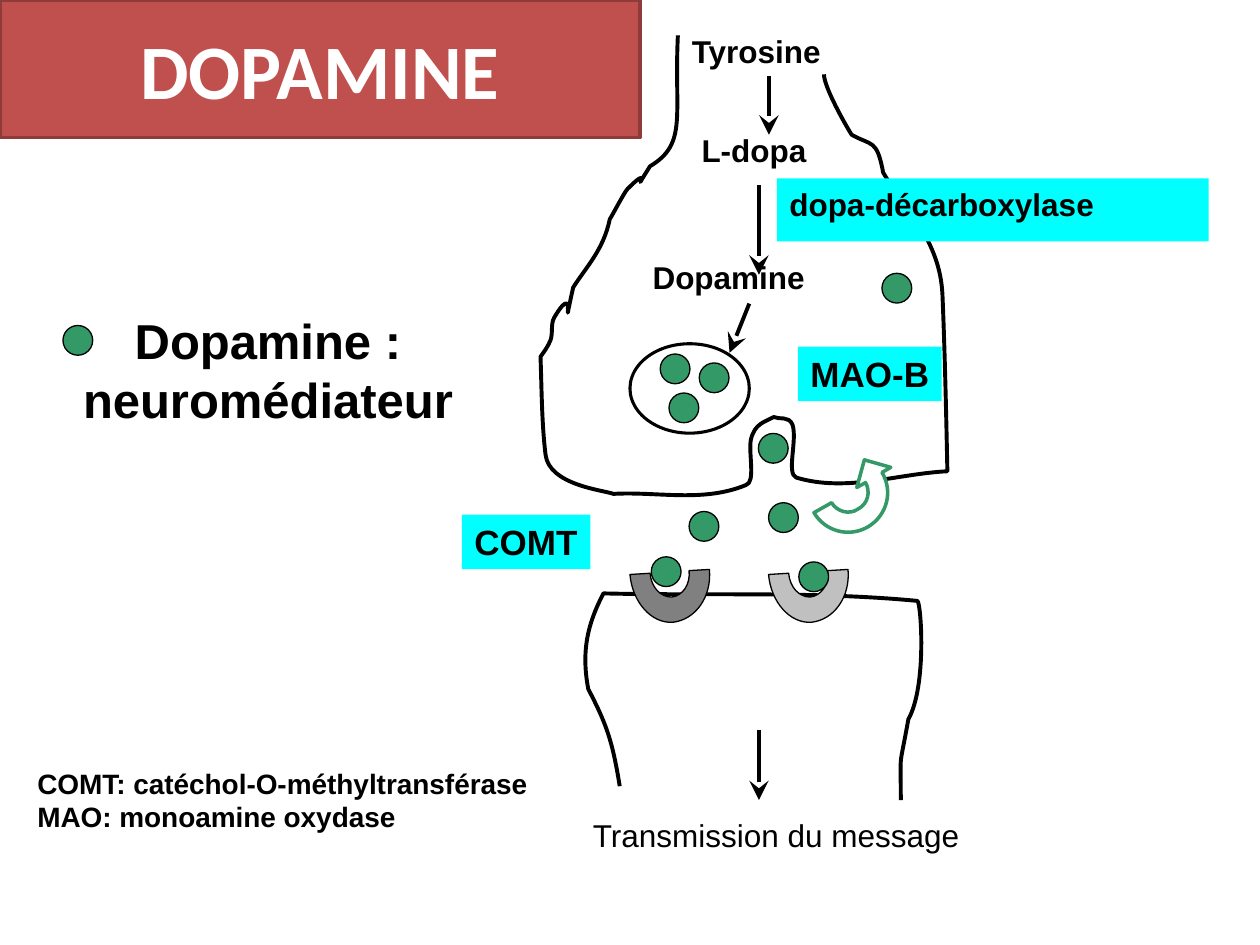
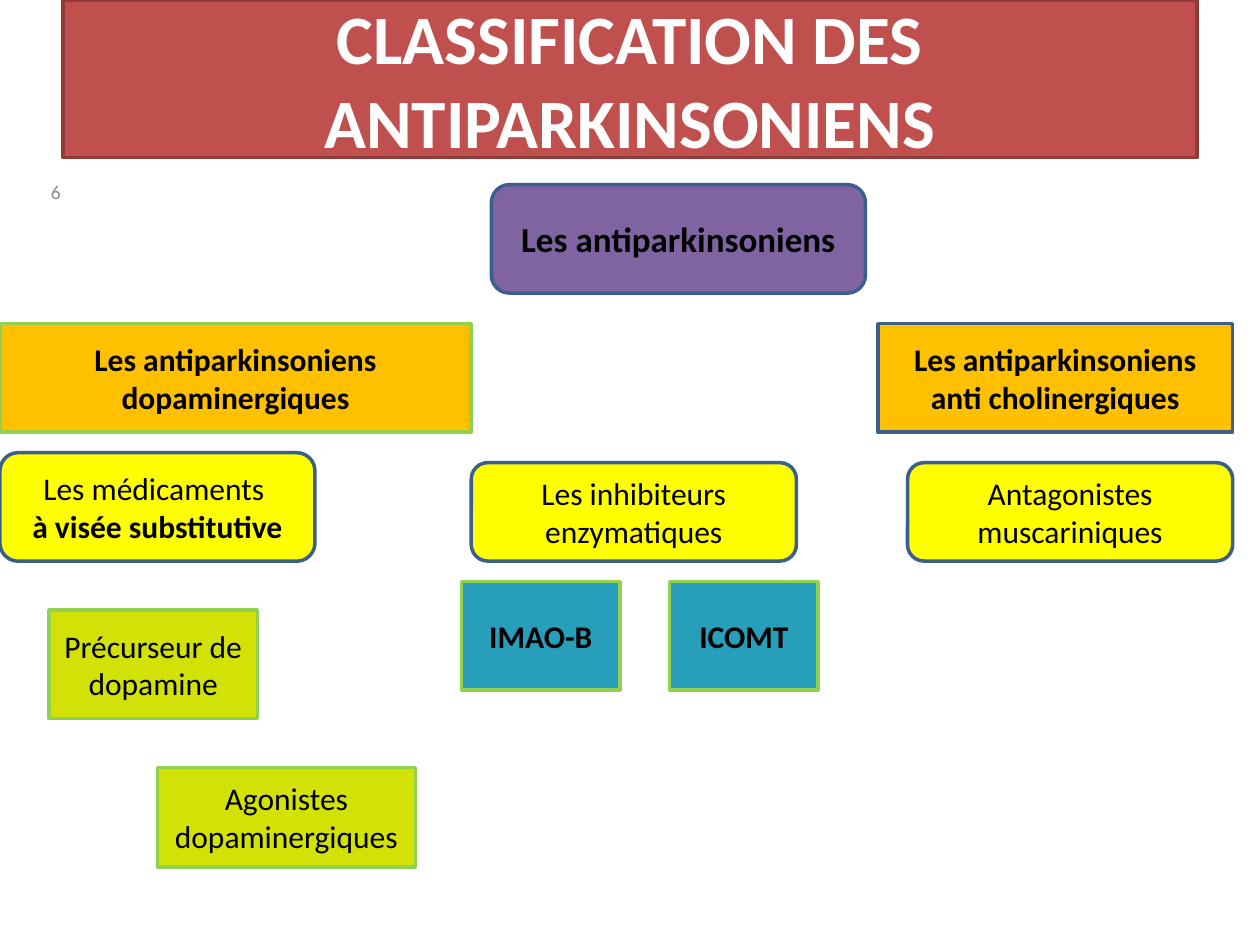
from lxml import etree
from pptx import Presentation
from pptx.dml.color import RGBColor
from pptx.enum import shapes, text
from pptx.oxml import ns
from pptx.util import Pt

BLACK = RGBColor(0x00, 0x00, 0x00)
WHITE = RGBColor(0xFF, 0xFF, 0xFF)
GREY = RGBColor(0x8C, 0x8C, 0x8C)
RED = RGBColor(0xC0, 0x50, 0x4D)
DARK_RED = RGBColor(0x8E, 0x3B, 0x39)
GREEN = RGBColor(0x33, 0x99, 0x66)
CYAN = RGBColor(0x00, 0xFF, 0xFF)
DARK_RECEPTOR = RGBColor(0x80, 0x80, 0x80)
LIGHT_RECEPTOR = RGBColor(0xC0, 0xC0, 0xC0)
PURPLE = RGBColor(0x80, 0x64, 0xA2)
ORANGE = RGBColor(0xFF, 0xC0, 0x00)
YELLOW = RGBColor(0xFF, 0xFF, 0x00)
LIME = RGBColor(0xD2, 0xE2, 0x06)
TEAL = RGBColor(0x27, 0x9F, 0xBB)
BLUE_LINE = RGBColor(0x3A, 0x5F, 0x8C)
GREEN_LINE = RGBColor(0x92, 0xD0, 0x50)

RECT = shapes.MSO_SHAPE.RECTANGLE
ROUNDED = shapes.MSO_SHAPE.ROUNDED_RECTANGLE
OVAL = shapes.MSO_SHAPE.OVAL
LEFT, CENTER, RIGHT = text.PP_ALIGN.LEFT, text.PP_ALIGN.CENTER, text.PP_ALIGN.RIGHT
TOP, MIDDLE = text.MSO_ANCHOR.TOP, text.MSO_ANCHOR.MIDDLE

DOT_SIZE = 17
UNITS_PER_POINT = 100

AXON_TERMINAL = [
    (123.4, 20.2),
    (121.2, 66.2, 129.1, 82.1, 107.5, 95),
    (93.8, 116.6, 111.8, 90.7, 94.6, 108),
    (93.1, 109.4, 85.9, 123.1, 84.5, 125.3),
    (80.9, 142.6, 71.5, 151.9, 63.6, 164.2),
    (55.7, 199.4, 67.2, 157, 52.8, 181.4),
    (50.6, 185, 52.1, 190.8, 50.6, 194.4),
    (49.2, 198, 47, 200.9, 44.9, 203.8),
    (45.6, 222.5, 45.6, 241.9, 47.8, 259.9),
    (49.9, 277.2, 80.9, 280.1, 86.6, 282.2),
    (111.8, 280.8, 137.8, 287.3, 162.2, 277.2),
    (168, 275.8, 163.7, 259.2, 165.1, 251.3),
    (167.3, 241.9, 173, 241.2, 178.1, 238.3),
    (181.7, 239.8, 186.7, 237.6, 188.9, 242.6),
    (191.8, 251.3, 185.3, 270.7, 191, 272.9),
    (219.8, 281.5, 248.6, 270.7, 277.4, 269.3),
    (276.7, 235.4, 276, 202.3, 274.6, 168.5),
    (273.1, 136.8, 253, 119.5, 240.7, 98.6),
    (237.1, 79.2, 234.2, 83.5, 222.7, 77),
    (219.1, 71.3, 206.9, 49.7, 206.9, 42.5),
]
TARGET_NEURON = [
    (90.2, 449.3),
    (85.9, 422.6, 82.3, 413.3, 72.2, 393.8),
    (67.9, 371.5, 72.2, 355.7, 80.9, 339.1),
    (140.6, 340.6, 200.4, 337.7, 260.2, 343.4),
    (262.3, 343.4, 265.9, 391.7, 255.1, 411.1),
    (249.4, 442.8, 250.8, 427, 250.8, 457.2),
]
RECEPTOR = [
    (33.8, 0.7),
    (34.6, 8.6, 30.2, 15.1, 23.8, 15.8),
    (17.3, 15.8, 12.2, 10.1, 11.5, 2.2),
    (0, 2.9),
    (1.4, 18.7, 12.2, 31, 24.5, 30.2),
    (37.4, 28.8, 46.8, 15.8, 45.4, 0),
]
REUPTAKE_ARROW = [
    (230.6, 275.8),
    (233.5, 280.8, 232.1, 288, 226.3, 290.9),
    (221.3, 294.5, 214.1, 292.3, 211.2, 287.3),
    (201.1, 293),
    (207.6, 303.8, 221.3, 307.4, 232.1, 301),
    (242.9, 294.5, 246.5, 280.8, 240, 270),
    (245, 267.1),
    (229.9, 262.8),
    (225.6, 278.6),
]
DOPAMINE_DOTS = [
    (129.8, 292.3), (118.3, 224.6), (135.6, 207.4), (169.4, 247.7), (113.3, 202.3),
    (240, 156.2), (192.5, 321.1), (175.2, 287.3), (108.2, 318.2),
]
SYNAPSE_LABELS = [
    ("Tyrosine", 124.2, 14.6, 114.5, 36, 18, True, None),
    ("Dopamine", 101.8, 144, 130.3, 36, 18, True, None),
    ("L-dopa", 129.8, 71.3, 94.3, 36, 18, True, None),
    ("Transmission du message", 67.7, 463, 295.2, 36, 18, False, None),
    ("MAO-B", 192, 198, 82.1, 31.2, 20, True, CYAN),
    ("COMT", 0, 294, 73.4, 31.2, 20, True, CYAN),
    ("dopa-décarboxylase", 180, 102, 246.7, 36, 18, True, CYAN),
]
PATHWAY_ARROWS = [
    (175.4, 43.2, 175.4, 77),
    (169.7, 105.8, 169.7, 157),
    (164.2, 173.5, 152.9, 201.6),
    (169.7, 417.4, 169.7, 457.2),
]
DRUG_CLASSES = [
    (["Les antiparkinsoniens"], ROUNDED, 280.8, 105.5, 213.8, 62, PURPLE, BLUE_LINE, 20, True),
    (["Les antiparkinsoniens anti cholinergiques"], RECT, 501.8, 185, 202.5, 62, ORANGE, BLUE_LINE, 18, True),
    (["Les antiparkinsoniens dopaminergiques"], RECT, 0, 185, 269.3, 62, ORANGE, GREEN_LINE, 18, True),
    (["Les médicaments ", "à visée substitutive"], ROUNDED, 0, 258.7, 180, 62, YELLOW, BLUE_LINE, 18, False),
    (["Les inhibiteurs enzymatiques"], ROUNDED, 269.3, 264.4, 185.8, 56.2, YELLOW, BLUE_LINE, 18, False),
    (["Précurseur de dopamine"], RECT, 28.1, 348.7, 119, 62, LIME, GREEN_LINE, 18, False),
    (["Agonistes dopaminergiques"], RECT, 90, 438.7, 147.4, 56.7, LIME, GREEN_LINE, 18, False),
    (["IMAO-B"], RECT, 263.7, 332.4, 90.7, 62, TEAL, GREEN_LINE, 18, True),
    (["ICOMT"], RECT, 382.6, 332.4, 85, 62, TEAL, GREEN_LINE, 18, True),
    (["Antagonistes muscariniques"], ROUNDED, 518.6, 264.4, 185.8, 56.2, YELLOW, BLUE_LINE, 18, False),
]


def paint(shape, fill, line, width):
    shape.shadow.inherit = False
    if fill is None:
        shape.fill.background()
    else:
        shape.fill.solid()
        shape.fill.fore_color.rgb = fill
    if line is None:
        shape.line.fill.background()
    else:
        shape.line.color.rgb = line
        shape.line.width = Pt(width)


def add_preset(slide, preset, left, top, width, height, fill=None, line=None, line_width=2):
    shape = slide.shapes.add_shape(preset, Pt(left), Pt(top), Pt(width), Pt(height))
    paint(shape, fill, line, line_width)
    return shape


def write(shape, lines, size, bold=False, font="Arial", color=BLACK,
          align=LEFT, anchor=TOP, wrap=True, grow=False):
    frame = shape.text_frame
    frame.text = "\n".join(lines)
    frame.word_wrap = wrap
    frame.vertical_anchor = anchor
    frame.auto_size = text.MSO_AUTO_SIZE.SHAPE_TO_FIT_TEXT if grow else text.MSO_AUTO_SIZE.NONE
    for paragraph in frame.paragraphs:
        paragraph.alignment = align
        paragraph.font.size = Pt(size)
        paragraph.font.bold = bold
        paragraph.font.name = font
        paragraph.font.color.rgb = color


def add_label(slide, lines, left, top, width, height, size, fill=None, **style):
    if fill is None:
        shape = slide.shapes.add_textbox(Pt(left), Pt(top), Pt(width), Pt(height))
    else:
        shape = add_preset(slide, RECT, left, top, width, height, fill)
    write(shape, lines, size, **style)


def add_title(slide, title, left, width, height, size):
    band = add_preset(slide, RECT, left, 0, width, height, RED, DARK_RED)
    write(band, [title], size, True, "Calibri", WHITE, CENTER, MIDDLE)


def bend_segments(shape, segments, origin):
    lines = list(shape._element.iter(ns.qn("a:lnTo")))
    for line, segment in zip(lines, segments):
        if len(segment) == 2:
            continue
        line.tag = ns.qn("a:cubicBezTo")
        for point in list(line):
            line.remove(point)
        for x, y in zip(segment[::2], segment[1::2]):
            etree.SubElement(line, ns.qn("a:pt"), x=str(x - origin[0]), y=str(y - origin[1]))


def add_outline(slide, outline, left, top, fill, line, width, close=False):
    segments = [tuple(round(value * UNITS_PER_POINT) for value in segment) for segment in outline]
    corners = [segment[-2:] for segment in segments]
    builder = slide.shapes.build_freeform(*corners[0], scale=Pt(1) / UNITS_PER_POINT)
    builder.add_line_segments(corners[1:], close=close)
    shape = builder.convert_to_shape(Pt(left), Pt(top))
    bend_segments(shape, segments[1:], [min(values) for values in zip(*corners)])
    paint(shape, fill, line, width)


def add_arrow(slide, x1, y1, x2, y2):
    arrow = slide.shapes.add_connector(
        shapes.MSO_CONNECTOR.STRAIGHT, Pt(x1), Pt(y1), Pt(x2), Pt(y2))
    arrow.line.color.rgb = BLACK
    arrow.line.width = Pt(2.25)
    line = arrow.line._get_or_add_ln()
    etree.SubElement(line, ns.qn("a:tailEnd"), type="stealth", w="lg", len="lg")
    etree.SubElement(arrow._element.spPr, ns.qn("a:effectLst"))


def add_dot(slide, left, top):
    add_preset(slide, OVAL, left, top, DOT_SIZE, DOT_SIZE, GREEN, BLACK, 0.75)


def draw_synapse(slide, left, top):
    for outline in (AXON_TERMINAL, TARGET_NEURON):
        add_outline(slide, outline, left, top, None, BLACK, 2.25)
    for index, fill in enumerate((DARK_RECEPTOR, LIGHT_RECEPTOR)):
        add_outline(slide, RECEPTOR, left + 96 + index * 79.2, top + 325.4, fill, BLACK, 0.75, True)
    add_preset(slide, OVAL, left + 96, top + 196.4, 68.2, 51.1, None, BLACK, 1.75)
    for x, y in DOPAMINE_DOTS:
        add_dot(slide, left + x, top + y)
    for x1, y1, x2, y2 in PATHWAY_ARROWS:
        add_arrow(slide, left + x1, top + y1, left + x2, top + y2)
    for label, x, y, width, height, size, bold, fill in SYNAPSE_LABELS:
        add_label(slide, [label], left + x, top + y, width, height, size, fill,
                  bold=bold, wrap=False, grow=True)
    add_outline(slide, REUPTAKE_ARROW, left, top, WHITE, GREEN, 2, True)


def draw_legend(slide, left, top):
    add_label(slide, ["Dopamine :", "neuromédiateur"], left, top, 246.2, 74.2, 28,
              bold=True, align=CENTER, grow=True)
    add_dot(slide, left + 6, top + 11.8)


def draw_classification(slide, left, top):
    for lines, preset, x, y, width, height, fill, line, size, bold in DRUG_CLASSES:
        box = add_preset(slide, preset, left + x, top + y, width, height, fill, line)
        write(box, lines, size, bold, "Calibri", BLACK, CENTER, MIDDLE)
        if len(lines) > 1:
            box.text_frame.paragraphs[-1].font.bold = True


def build_dopamine(slide):
    add_title(slide, "DOPAMINE", 0, 365.8, 78.7, 44)
    draw_legend(slide, 30, 174.2)
    draw_synapse(slide, 264, 0)
    add_label(slide, ["COMT: catéchol-O-méthyltransférase", "MAO: monoamine oxydase"],
              14.2, 434.2, 298.8, 65.5, 16, bold=True, wrap=False, grow=True)


def build_classification(slide):
    add_title(slide, "CLASSIFICATION DES ANTIPARKINSONIENS", 36, 648, 90, 39.6)
    draw_classification(slide, 0, 0)
    add_label(slide, ["6"], 0, 100.1, 41.8, 19.4, 11.1, font="Calibri", color=GREY,
              align=RIGHT, anchor=MIDDLE)


def main():
    presentation = Presentation()
    presentation.slide_width, presentation.slide_height = Pt(720), Pt(540)
    for build in (build_dopamine, build_classification):
        build(presentation.slides.add_slide(presentation.slide_layouts[6]))
    presentation.save("out.pptx")


if __name__ == "__main__":
    main()
